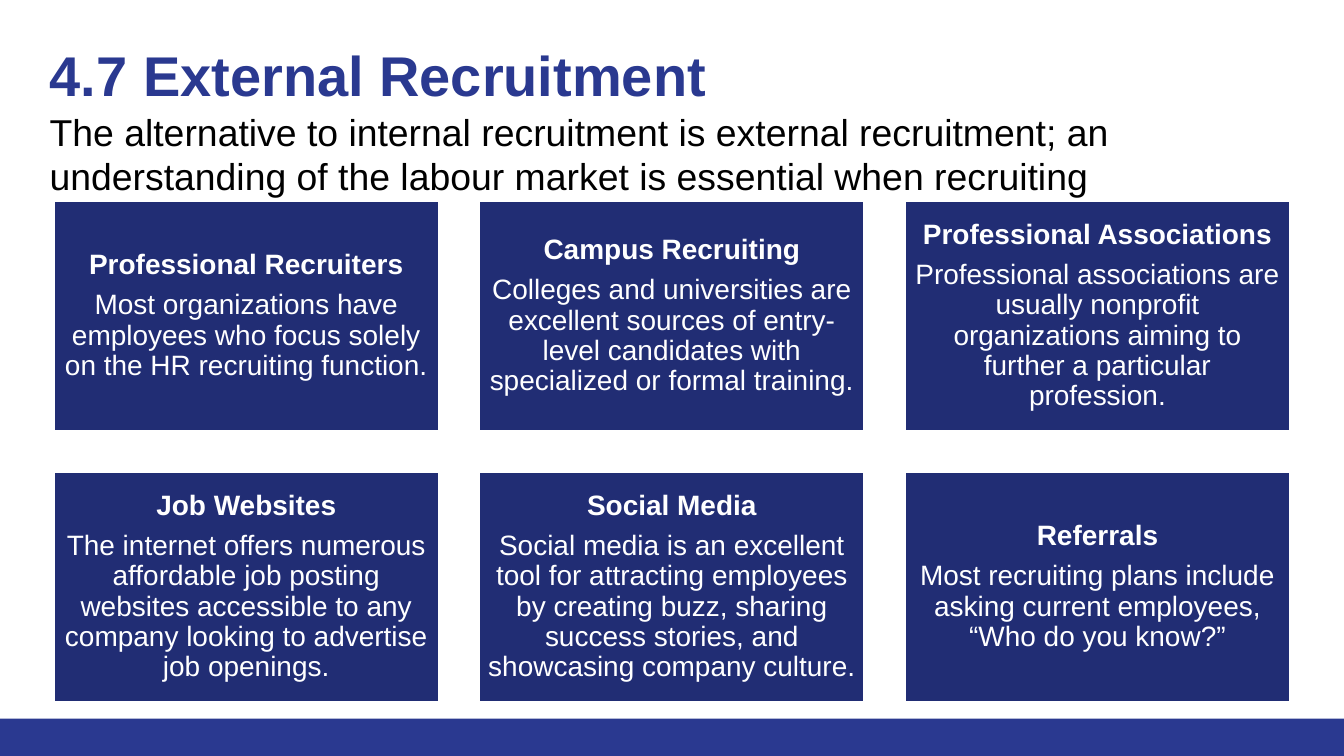
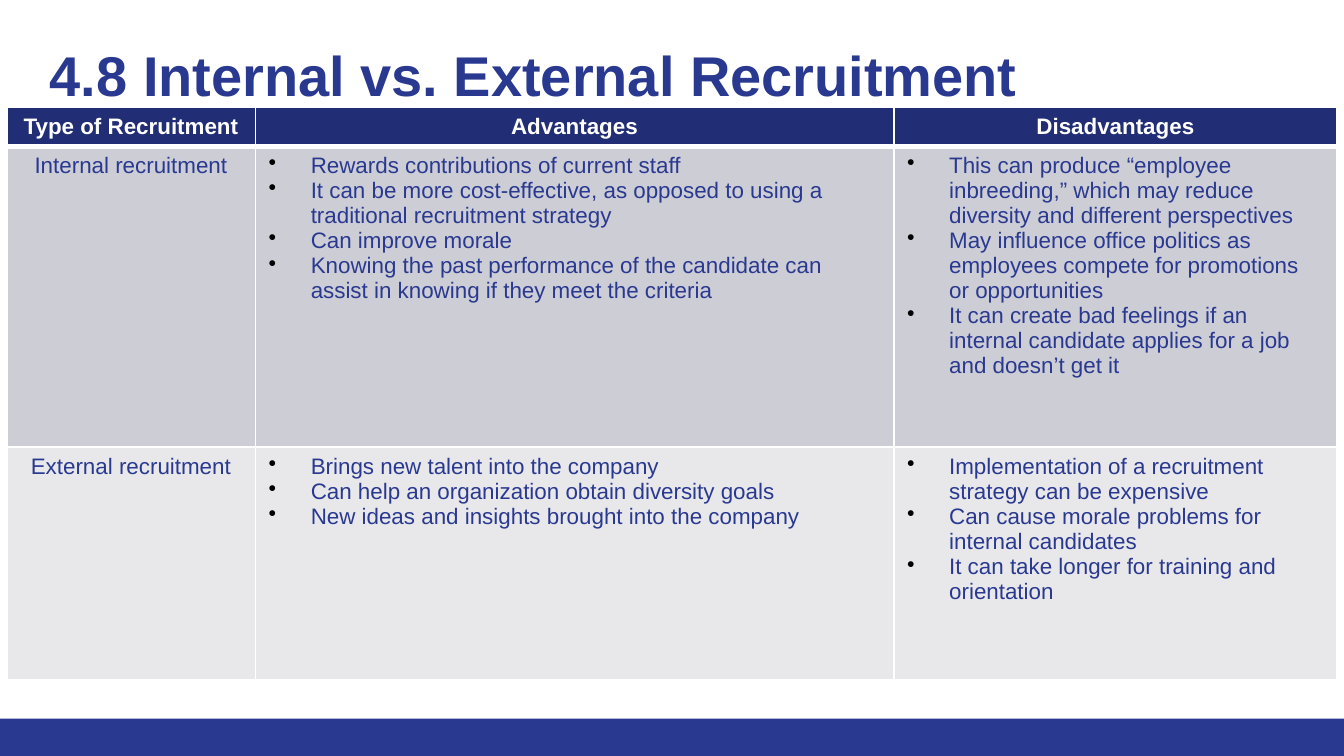
from dataclasses import dataclass

from lxml.etree import SubElement
from pptx import Presentation
from pptx.dml.color import RGBColor
from pptx.enum.shapes import MSO_SHAPE
from pptx.enum.text import MSO_ANCHOR, PP_ALIGN
from pptx.oxml.ns import qn
from pptx.util import Pt

# Content
CARDS_TITLE = "4.7 External Recruitment"
INTRO = ("The alternative to internal recruitment is external recruitment; an "
         "understanding of the labour market is essential when recruiting")
CARDS = [
    ("Professional Recruiters",
     "Most organizations have employees who focus solely on the HR recruiting function."),
    ("Campus Recruiting",
     "Colleges and universities are excellent sources of entry-level candidates "
     "with specialized or formal training."),
    ("Professional Associations",
     "Professional associations are usually nonprofit organizations aiming to "
     "further a particular profession."),
    ("Job Websites",
     "The internet offers numerous affordable job posting websites accessible to "
     "any company looking to advertise job openings."),
    ("Social Media",
     "Social media is an excellent tool for attracting employees by creating buzz, "
     "sharing success stories, and showcasing company culture."),
    ("Referrals",
     "Most recruiting plans include asking current employees, “Who do you know?”"),
]

TABLE_TITLE = "4.8 Internal vs. External Recruitment"
HEADERS = ["Type of Recruitment", "Advantages", "Disadvantages"]
ROWS = [
    ("Internal recruitment",
     ["Rewards contributions of current staff",
      "It can be more cost-effective, as opposed to using a traditional recruitment strategy",
      "Can improve morale",
      "Knowing the past performance of the candidate can assist in knowing if they "
      "meet the criteria"],
     ["This can produce “employee inbreeding,” which may reduce diversity and "
      "different perspectives",
      "May influence office politics as employees compete for promotions or opportunities",
      "It can create bad feelings if an internal candidate applies for a job and "
      "doesn’t get it"]),
    ("External recruitment",
     ["Brings new talent into the company",
      "Can help an organization obtain diversity goals",
      "New ideas and insights brought into the company"],
     ["Implementation of a recruitment strategy can be expensive",
      "Can cause morale problems for internal candidates",
      "It can take longer for training and orientation"]),
]


@dataclass(frozen=True)
class Theme:
    font: str = "Arial"
    blue: str = "2A3990"
    navy: str = "212D74"
    white: str = "FFFFFF"
    black: str = "000000"
    row_fills: tuple = ("CDCDD6", "E8E8EB")
    title: int = 30
    intro: int = 20
    card: int = 15
    table: int = 12


T = Theme()
SLIDE_W, SLIDE_H, BAND_H = 720, 405, 20


# Shared helpers
def rgb(color):
    return RGBColor.from_string(color)


def box(*lengths):
    return [Pt(v) for v in lengths]


def add_run(p, text, size, color, bold=False):
    r = p.add_run()
    r.text = text
    f = r.font
    f.name, f.size, f.bold = T.font, Pt(size), bold
    f.color.rgb = rgb(color)


def set_insets(tf, inset):
    tf.margin_left = tf.margin_top = tf.margin_right = tf.margin_bottom = Pt(inset)


def add_rect(s, place, fill):
    sp = s.shapes.add_shape(MSO_SHAPE.RECTANGLE, *box(*place))
    sp.shadow.inherit = False
    sp.fill.solid()
    sp.fill.fore_color.rgb = rgb(fill)
    sp.line.fill.background()
    return sp


def add_slide(prs, title):
    s = prs.slides.add_slide(prs.slide_layouts[5])
    sp = s.shapes.title
    sp.left, sp.top, sp.width, sp.height = box(19.5, 14.5, 662.5, 64)
    tf = sp.text_frame
    tf.word_wrap, tf.vertical_anchor = True, MSO_ANCHOR.TOP
    set_insets(tf, 7.2)
    p = tf.paragraphs[0]
    p.alignment = PP_ALIGN.LEFT
    add_run(p, title, T.title, T.blue, True)
    return s


def add_master_band(prs, s):
    band = add_rect(s, (0, SLIDE_H - BAND_H, SLIDE_W, BAND_H), T.blue)
    prs.slide_master.shapes.element.append(band.element)


# Recruitment source cards
def add_cards(s):
    left, top, width, height = 28.35, 107.2, 207.2, 124.3
    step_x, step_y, columns = 228, 145.2, 3
    for i, (heading, body) in enumerate(CARDS):
        row, col = divmod(i, columns)
        sp = add_rect(s, (left + col * step_x, top + row * step_y, width, height), T.navy)
        sp.line.color.rgb = rgb(T.white)
        sp.line.width = Pt(2)
        tf = sp.text_frame
        tf.word_wrap, tf.vertical_anchor = True, MSO_ANCHOR.MIDDLE
        set_insets(tf, 4.5)
        for p, text, bold in ((tf.paragraphs[0], heading, True),
                              (tf.add_paragraph(), body, False)):
            p.alignment, p.line_spacing, p.space_after = PP_ALIGN.CENTER, 0.9, Pt(5.25)
            add_run(p, text, T.card, T.white, bold)


def build_cards_slide(prs):
    s = add_slide(prs, CARDS_TITLE)
    tf = s.shapes.add_textbox(*box(19.5, 54.7, 632, 104.4)).text_frame
    tf.word_wrap = True
    add_run(tf.paragraphs[0], INTRO, T.intro, T.black)
    add_cards(s)
    return s


# Comparison table
def add_bullet(p):
    pPr = p._p.get_or_add_pPr()
    pPr.set("marL", str(Pt(22.5)))
    pPr.set("indent", str(-Pt(22.5)))
    SubElement(SubElement(pPr, qn("a:buClr")), qn("a:srgbClr")).set("val", T.black)
    SubElement(pPr, qn("a:buChar")).set("char", "•")


def set_borders(cell, bottom):
    tcPr = cell._tc.get_or_add_tcPr()
    for i, (side, width) in enumerate((("L", 1), ("R", 1), ("T", 1), ("B", bottom))):
        ln = tcPr.makeelement(qn(f"a:ln{side}"), {"w": str(Pt(width))})
        SubElement(SubElement(ln, qn("a:solidFill")), qn("a:srgbClr")).set("val", T.white)
        tcPr.insert(i, ln)


def fill_cell(cell, content, fill, color, bold=False, bottom=1):
    cell.fill.solid()
    cell.fill.fore_color.rgb = rgb(fill)
    set_borders(cell, bottom)
    bulleted = isinstance(content, list)
    tf = cell.text_frame
    for i, text in enumerate(content if bulleted else [content]):
        p = tf.add_paragraph() if i else tf.paragraphs[0]
        if bulleted:
            add_bullet(p)
        else:
            p.alignment = PP_ALIGN.CENTER
        add_run(p, text, T.table, color, bold)


def build_table_slide(prs):
    s = add_slide(prs, TABLE_TITLE)
    widths, heights = (133.2, 342, 237.6), (20, 161.3, 124.6)
    table = s.shapes.add_table(len(heights), len(widths),
                               *box(3.6, 57.6, sum(widths), sum(heights))).table
    for column, width in zip(table.columns, widths):
        column.width = Pt(width)
    for row, height in zip(table.rows, heights):
        row.height = Pt(height)
    for c, text in enumerate(HEADERS):
        fill_cell(table.cell(0, c), text, T.navy, T.white, True, 3)
    for r, (row, fill) in enumerate(zip(ROWS, T.row_fills), 1):
        for c, content in enumerate(row):
            fill_cell(table.cell(r, c), content, fill, T.blue)


def main():
    prs = Presentation()
    prs.slide_width, prs.slide_height = Pt(SLIDE_W), Pt(SLIDE_H)
    add_master_band(prs, build_cards_slide(prs))
    build_table_slide(prs)
    prs.save("out.pptx")


if __name__ == "__main__":
    main()
